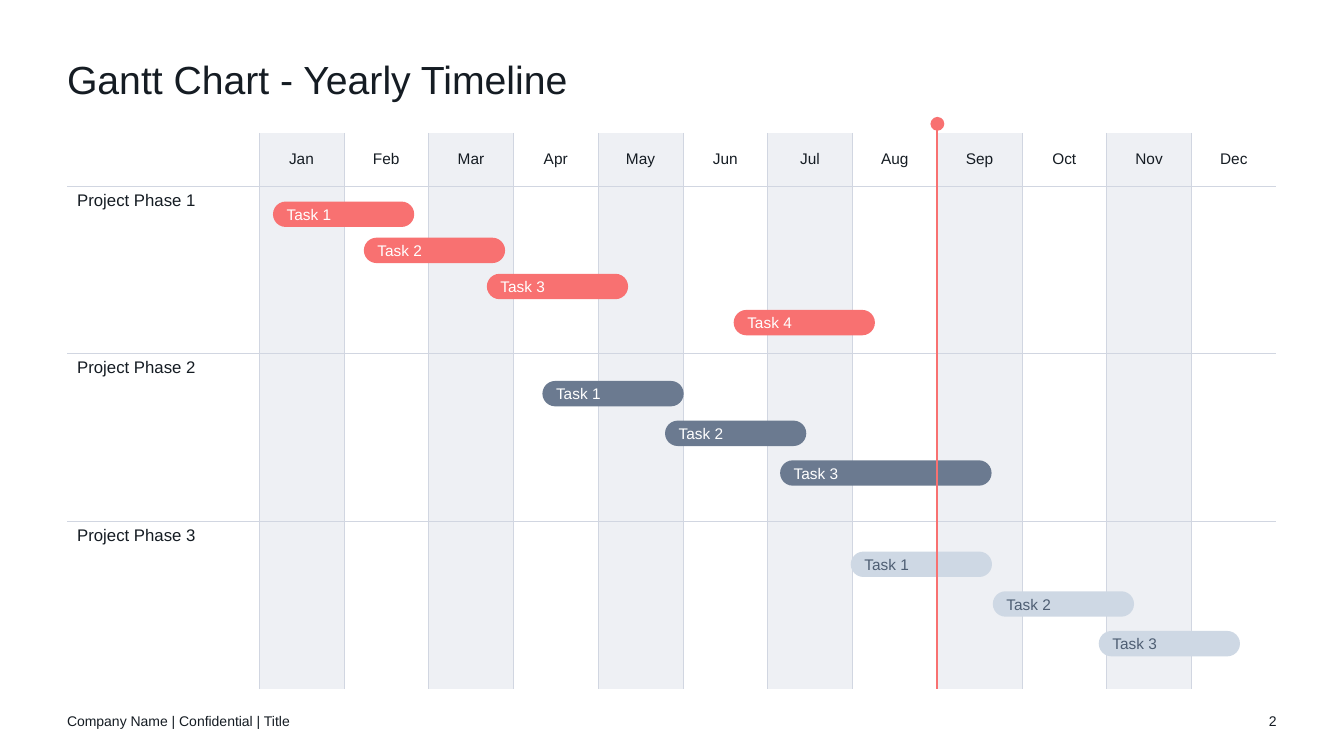
import pptx
import pptx.util
import pptx.dml.color
import pptx.enum.shapes
import pptx.enum.text
import pptx.oxml.ns
from lxml import etree

Cm, Pt = pptx.util.Cm, pptx.util.Pt
ALIGN = pptx.enum.text.PP_ALIGN
ANCHOR = pptx.enum.text.MSO_ANCHOR
SHAPE = pptx.enum.shapes.MSO_SHAPE

FONT = "Arial"
INK, GRID, BAND = "151C23", "D1D6E1", "EEF0F4"
RED, SLATE, PALE = "F87171", "6B7A90", "CED8E4"
WHITE, PALE_INK = "FFFFFF", "4E5E73"

MONTHS = ["Jan", "Feb", "Mar", "Apr", "May", "Jun",
          "Jul", "Aug", "Sep", "Oct", "Nov", "Dec"]

# Chart grid, in cm
LEFT, TOP, WIDTH = 1.69, 3.35, 30.48
LABEL_W, HEADER_H, PHASE_H = 4.84, 1.34, 4.22
MONTH_W = (WIDTH - LABEL_W) / len(MONTHS)
BAR_H, BAR_W, LONG_BAR_W = 0.64, 3.56, 5.33
TODAY_MONTHS = 8

# name, bar fill, bar text, first bar top, bar pitch, (left, width) of each bar
PHASES = [
    ("Project Phase 1", RED, WHITE, 5.08, 0.91,
     [(6.88, BAR_W), (9.17, BAR_W), (12.27, BAR_W), (18.49, BAR_W)]),
    ("Project Phase 2", SLATE, WHITE, 9.6, 1,
     [(13.67, BAR_W), (16.76, BAR_W), (19.66, LONG_BAR_W)]),
    ("Project Phase 3", PALE, PALE_INK, 13.9, 1,
     [(21.44, BAR_W), (25.02, BAR_W), (27.69, BAR_W)]),
]


def rgb(value):
    return pptx.dml.color.RGBColor.from_string(value)


def add_run(p, text, size, color=INK, align=ALIGN.LEFT):
    p.alignment = align
    r = p.add_run()
    r.text = text
    r.font.name = FONT
    r.font.size = Pt(size)
    r.font.color.rgb = rgb(color)


def add_text(s, text, x, y, w, h, size, align=ALIGN.LEFT, anchor=ANCHOR.MIDDLE):
    tf = s.shapes.add_textbox(Cm(x), Cm(y), Cm(w), Cm(h)).text_frame
    tf.word_wrap = True
    tf.vertical_anchor = anchor
    tf.margin_left = tf.margin_right = tf.margin_top = tf.margin_bottom = 0
    p = tf.paragraphs[0]
    add_run(p, text, size, align=align)
    return p


def set_borders(cell, inner_sides):
    """Draw grid lines on the given sides ("LRTB") and clear the others."""
    tc_pr = cell._tc.get_or_add_tcPr()
    for side in "LRTB":
        ln = etree.SubElement(tc_pr, pptx.oxml.ns.qn("a:ln" + side), w=str(Pt(0.5)))
        if side in inner_sides:
            fill = etree.SubElement(ln, pptx.oxml.ns.qn("a:solidFill"))
            etree.SubElement(fill, pptx.oxml.ns.qn("a:srgbClr"), val=GRID)
        else:
            etree.SubElement(ln, pptx.oxml.ns.qn("a:noFill"))


def add_grid(s):
    rows, cols = len(PHASES) + 1, len(MONTHS) + 1
    height = HEADER_H + PHASE_H * len(PHASES)
    table = s.shapes.add_table(rows, cols, Cm(LEFT), Cm(TOP), Cm(WIDTH), Cm(height)).table
    table.first_row = table.horz_banding = False
    for i, col in enumerate(table.columns):
        col.width = Cm(MONTH_W if i else LABEL_W)
    for i, row in enumerate(table.rows):
        row.height = Cm(PHASE_H if i else HEADER_H)
        for j, cell in enumerate(row.cells):
            inner = {"L": j > 0, "R": j < cols - 1, "T": i > 0, "B": i < rows - 1}
            set_borders(cell, [side for side, drawn in inner.items() if drawn])
            if j % 2:
                cell.fill.solid()
                cell.fill.fore_color.rgb = rgb(BAND)
            else:
                cell.fill.background()
    for j, month in enumerate(MONTHS, 1):
        cell = table.cell(0, j)
        cell.vertical_anchor = ANCHOR.MIDDLE
        cell.margin_left = cell.margin_right = 0
        add_run(cell.text_frame.paragraphs[0], month, 11, align=ALIGN.CENTER)
    for i, phase in enumerate(PHASES, 1):
        add_run(table.cell(i, 0).text_frame.paragraphs[0], phase[0], 12)


def add_bar(s, text, x, y, w, fill, color):
    sp = s.shapes.add_shape(SHAPE.ROUNDED_RECTANGLE, Cm(x), Cm(y), Cm(w), Cm(BAR_H))
    sp.adjustments[0] = 0.5
    sp.shadow.inherit = False
    sp.fill.solid()
    sp.fill.fore_color.rgb = rgb(fill)
    sp.line.fill.background()
    sp.text_frame.vertical_anchor = ANCHOR.MIDDLE
    add_run(sp.text_frame.paragraphs[0], text, 11, color)


def add_today_line(s):
    x = Cm(LEFT + LABEL_W + TODAY_MONTHS * MONTH_W)
    line = s.shapes.add_connector(
        pptx.enum.shapes.MSO_CONNECTOR.STRAIGHT, x, Cm(3.12), x, Cm(17.35))
    line.line.color.rgb = rgb(RED)
    line.line.width = Pt(1.5)
    etree.SubElement(line.line._get_or_add_ln(), pptx.oxml.ns.qn("a:headEnd"),
                     type="oval", w="lg", len="lg")
    etree.SubElement(line._element.spPr, pptx.oxml.ns.qn("a:effectLst"))


def main():
    prs = pptx.Presentation()
    prs.slide_width, prs.slide_height = Cm(33.87), Cm(19.05)
    s = prs.slides.add_slide(prs.slide_layouts[6])

    title = add_text(s, "Gantt Chart - Yearly Timeline", LEFT, 1.52, WIDTH, 1.52, 28,
                     anchor=ANCHOR.TOP)
    title.line_spacing = 0.9
    add_grid(s)
    for _, fill, color, top, pitch, bars in PHASES:
        for i, (x, w) in enumerate(bars):
            add_bar(s, f"Task {i + 1}", x, top + i * pitch, w, fill, color)
    add_today_line(s)
    add_text(s, "Company Name | Confidential | Title", LEFT, 17.65, 11.43, 1.02, 10)
    add_text(s, "2", 30.9, 17.65, 1.27, 1.02, 10, ALIGN.RIGHT)

    prs.save("out.pptx")


if __name__ == "__main__":
    main()
